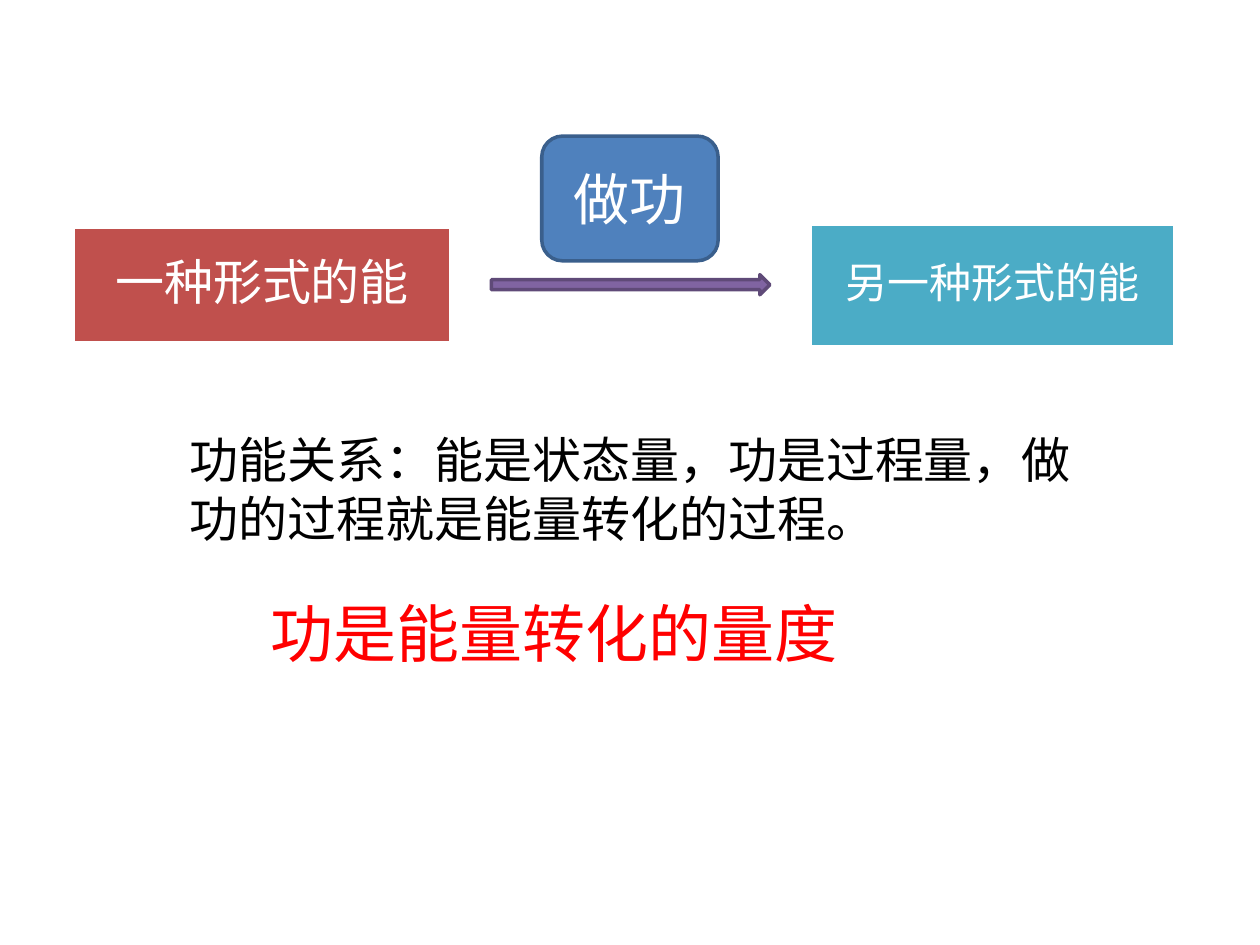
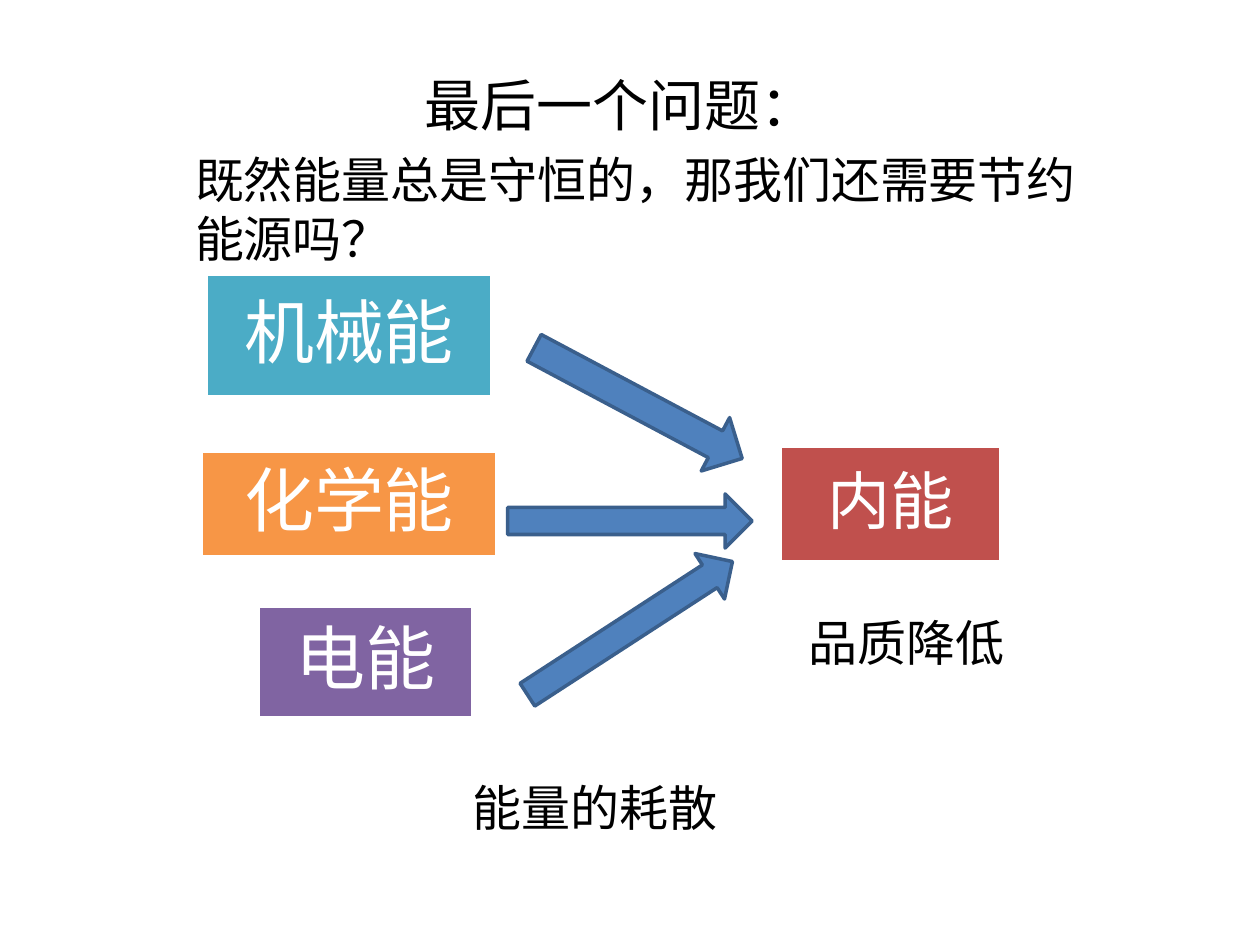
import dataclasses
import pptx
import pptx.util
import pptx.dml.color
import pptx.enum.shapes
import pptx.enum.text

Inches, Pt = pptx.util.Inches, pptx.util.Pt
Kind = pptx.enum.shapes.MSO_SHAPE
Align = pptx.enum.text.PP_ALIGN
Anchor = pptx.enum.text.MSO_ANCHOR
Fit = pptx.enum.text.MSO_AUTO_SIZE


@dataclasses.dataclass(frozen=True)
class Theme:
    font: str = "Calibri"
    black: str = "000000"
    white: str = "FFFFFF"
    alert: str = "FF0000"
    blue: str = "4F81BD"
    navy: str = "3A5F8C"
    red: str = "C0504D"
    teal: str = "4BACC6"
    orange: str = "F79646"
    purple: str = "8064A2"
    plum: str = "5F4A78"
    small: int = 24
    body: int = 28
    head: int = 32
    large: int = 36
    huge: int = 40
    edge: int = 2
    inset: float = 0.27
    leading: float = 0.9
    after: float = 0.35


THEME = Theme()


def apply(target, values):
    for name, value in values.items():
        setattr(target, name, value)


def color(code):
    return pptx.dml.color.RGBColor.from_string(code)


def place(origin, box):
    left, top, width, height = box
    return [Inches(n) for n in (origin[0] + left, origin[1] + top, width, height)]


def write(shape, text, size, ink, frame, para):
    apply(shape.text_frame, {"word_wrap": True, **frame})
    line = shape.text_frame.paragraphs[0]
    apply(line, para)
    run = line.add_run()
    run.text = text
    apply(run.font, {"name": THEME.font, "size": Pt(size)})
    run.font.color.rgb = color(ink)


def label(slide, origin, box, text, size=THEME.body, ink=THEME.black):
    shape = slide.shapes.add_textbox(*place(origin, box))
    write(shape, text, size, ink, {"auto_size": Fit.SHAPE_TO_FIT_TEXT}, {})


def title(slide, origin, box, text):
    shape = slide.shapes.title
    apply(shape, dict(zip(("left", "top", "width", "height"), place(origin, box))))
    frame = {"auto_size": Fit.NONE, "vertical_anchor": Anchor.TOP}
    write(shape, text, THEME.head, THEME.black, frame, {"alignment": Align.LEFT})


def solid(slide, kind, origin, box, fill, line, turn=0):
    shape = slide.shapes.add_shape(kind, *place(origin, box))
    shape.shadow.inherit = False
    shape.fill.solid()
    shape.fill.fore_color.rgb = color(fill)
    shape.line.color.rgb = color(line)
    apply(shape.line, {"width": Pt(THEME.edge)})
    apply(shape, {"rotation": turn})
    return shape


def block(slide, origin, box, text, size, fill):
    shape = solid(slide, Kind.RECTANGLE, origin, box, fill, THEME.white)
    sides = ("margin_left", "margin_top", "margin_right", "margin_bottom")
    frame = {"vertical_anchor": Anchor.MIDDLE, **dict.fromkeys(sides, Inches(THEME.inset))}
    para = {"alignment": Align.CENTER, "line_spacing": THEME.leading,
            "space_after": Pt(size * THEME.after)}
    write(shape, text, size, THEME.white, frame, para)


def change(slide, origin):
    block(slide, origin, (0, 0.72, 3, 0.92), "一种形式的能", THEME.body, THEME.red)
    block(slide, origin, (5.85, 0.7, 2.89, 0.97), "另一种形式的能", THEME.small, THEME.teal)
    solid(slide, Kind.RIGHT_ARROW, origin, (3.32, 1.1, 2.21, 0.16), THEME.purple, THEME.plum)
    work = solid(slide, Kind.ROUNDED_RECTANGLE, origin, (3.72, 0, 1.4, 0.99),
                 THEME.blue, THEME.navy)
    write(work, "做功", THEME.head, THEME.white,
          {"vertical_anchor": Anchor.MIDDLE}, {"alignment": Align.CENTER})


def summary(slide, origin):
    label(slide, origin, (0, 0, 7.2, 1.04),
          "功能关系：能是状态量，功是过程量，做功的过程就是能量转化的过程。")
    label(slide, origin, (0.64, 1.31, 5.89, 0.71), "功是能量转化的量度",
          THEME.large, THEME.alert)


def question(slide, origin):
    title(slide, origin, (1.82, 0, 3.39, 0.64), "最后一个问题：")
    label(slide, origin, (0, 0.63, 7.3, 1.04),
          "既然能量总是守恒的，那我们还需要节约能源吗？")


def decay(slide, origin):
    block(slide, origin, (4.59, 1.36, 1.75, 0.92), "内能", THEME.large, THEME.red)
    forms = (
        ("机械能", THEME.teal, (0.04, 0, 2.26, 0.97), (2.53, 0.78, 1.87, 0.48), 28),
        ("化学能", THEME.orange, (0, 1.4, 2.34, 0.84), (2.43, 1.74, 1.94, 0.43), 0),
        ("电能", THEME.purple, (0.45, 2.63, 1.7, 0.89), (2.43, 2.59, 1.94, 0.43), 327),
    )
    for text, fill, box, arrow, turn in forms:
        block(slide, origin, box, text, THEME.huge, fill)
        solid(slide, Kind.RIGHT_ARROW, origin, arrow, THEME.blue, THEME.navy, turn)
    label(slide, origin, (4.72, 2.63, 1.89, 0.57), "品质降低")
    label(slide, origin, (2.05, 3.94, 2.28, 0.57), "能量的耗散")


def main():
    deck = pptx.Presentation()
    apply(deck, {"slide_width": Inches(10), "slide_height": Inches(7.5)})
    bare, titled = (deck.slide_layouts.get_by_name(n) for n in ("Blank", "Title Only"))

    first = deck.slides.add_slide(bare)
    change(first, (0.58, 1.08))
    summary(first, (1.41, 3.36))

    last = deck.slides.add_slide(titled)
    question(last, (1.45, 0.51))
    decay(last, (1.6, 2.18))

    deck.save("out.pptx")


if __name__ == "__main__":
    main()
